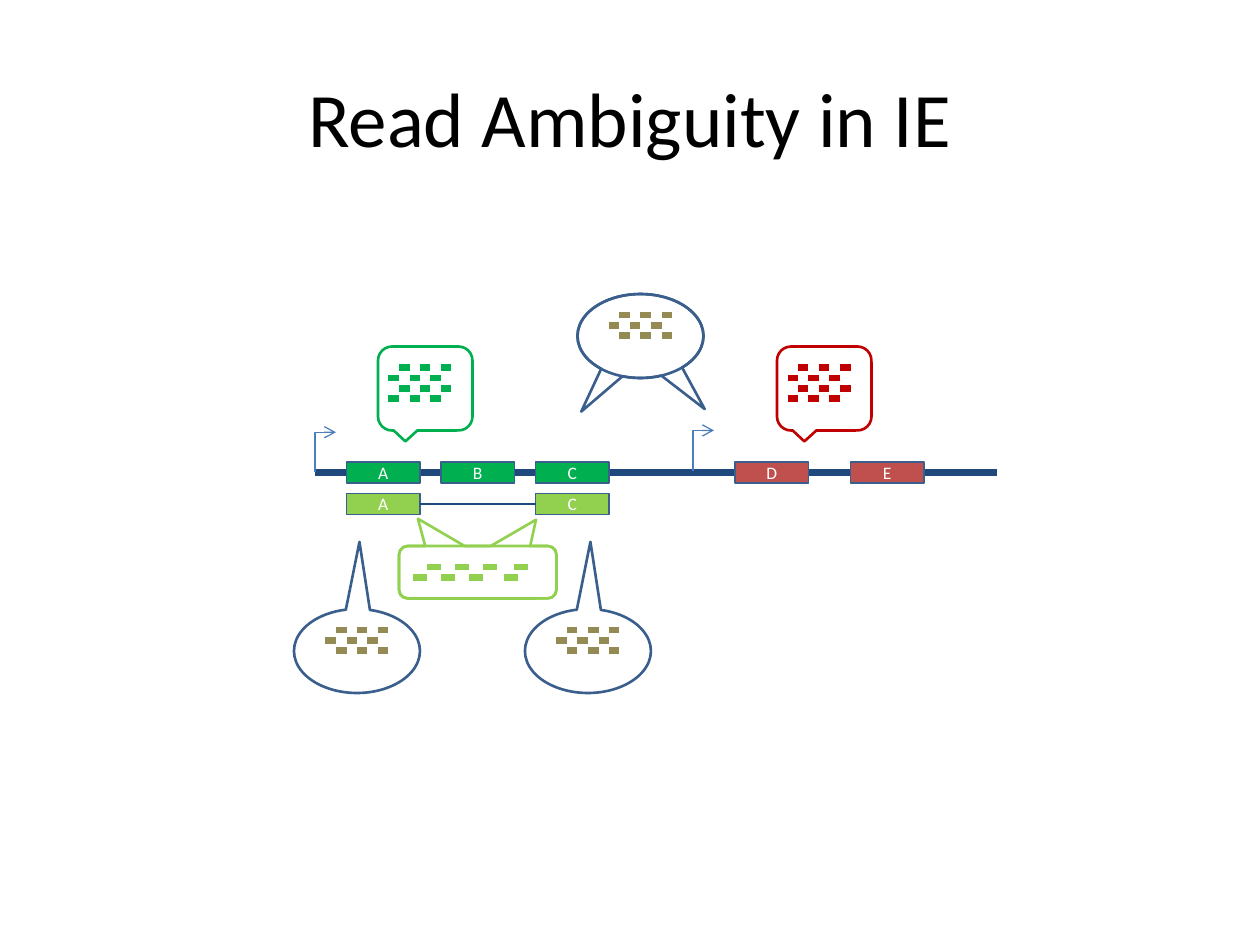
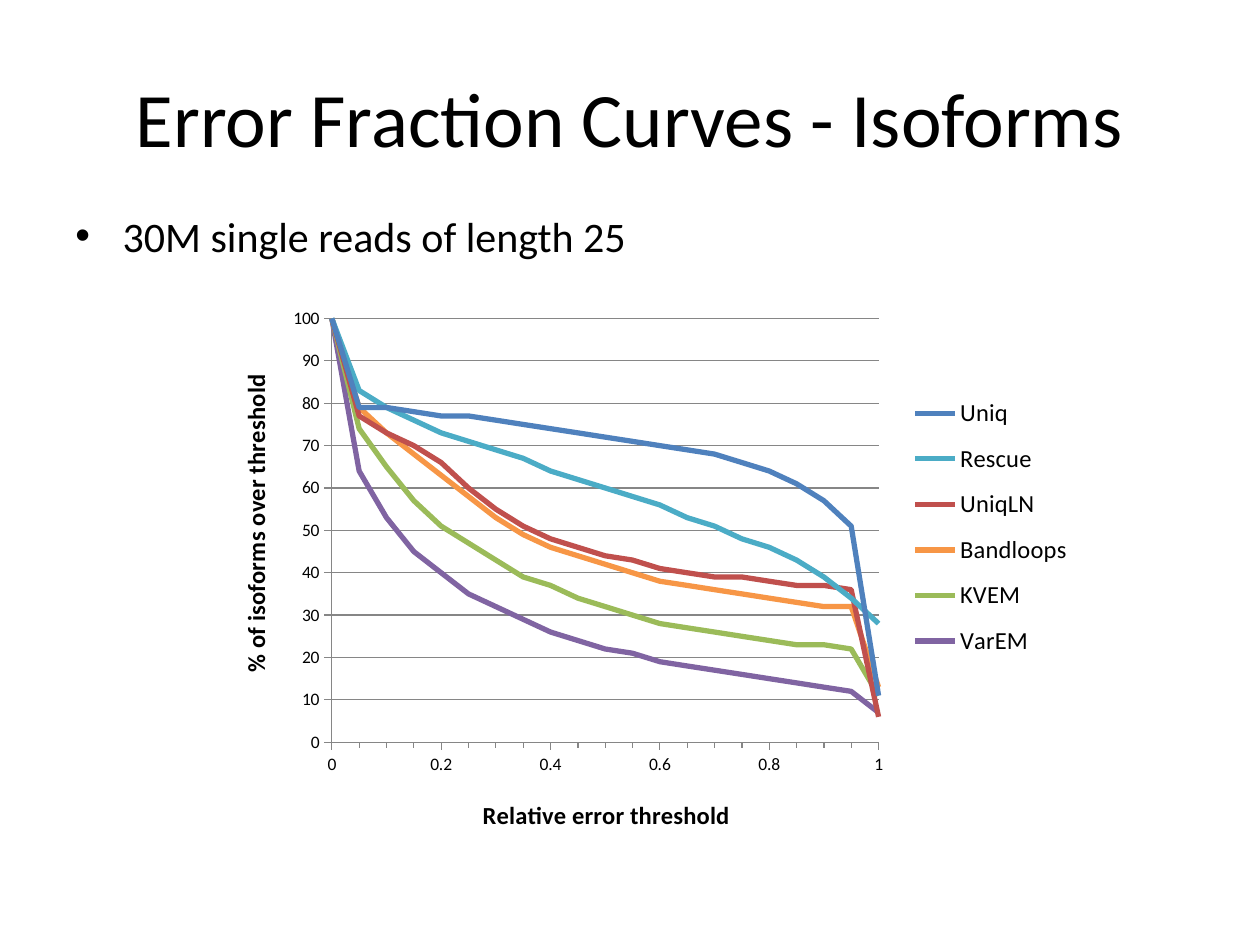
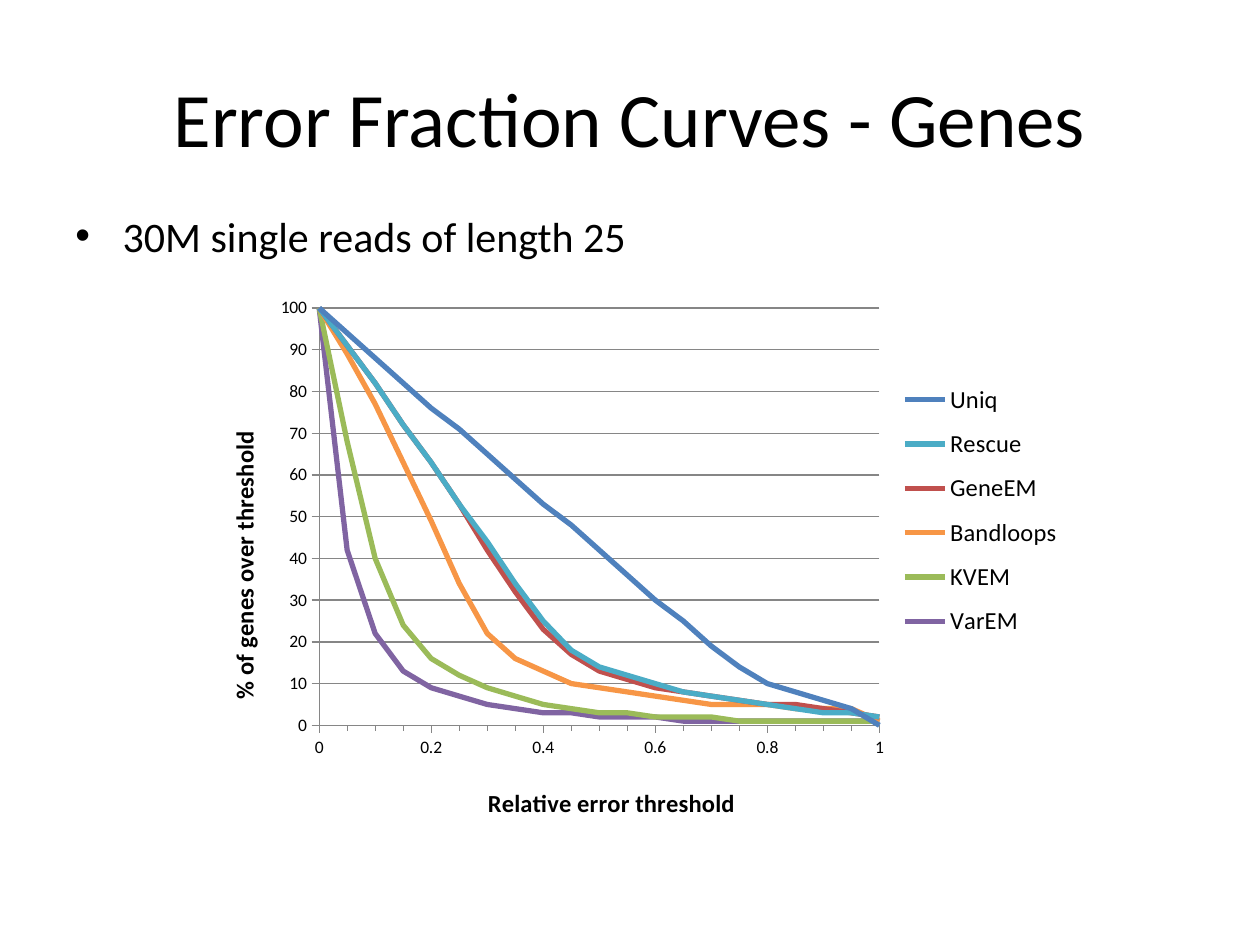
import dataclasses

import pptx
import pptx.chart.data
import pptx.dml.color
import pptx.enum.chart
import pptx.enum.shapes
import pptx.enum.text
import pptx.oxml
import pptx.oxml.ns
import pptx.oxml.xmlchemy
import pptx.util

Pt = pptx.util.Pt
SHAPE = pptx.enum.shapes.MSO_SHAPE
CONNECTOR = pptx.enum.shapes.MSO_CONNECTOR
TICK = pptx.enum.chart.XL_TICK_MARK
qn = pptx.oxml.ns.qn
OxmlElement = pptx.oxml.xmlchemy.OxmlElement


@dataclasses.dataclass(frozen=True)
class Theme:
    font: str = "Calibri"
    text: str = "000000"
    white: str = "FFFFFF"
    genome: str = "1F497D"
    outline: str = "3A5F8C"
    promoter: str = "4B7EBC"
    gene1: str = "00B050"
    isoform: str = "92D050"
    gene2: str = "C0504D"
    gene2_reads: str = "C00000"
    shared_reads: str = "948A54"
    grid: str = "868686"
    curves: tuple = ("4F81BD", "4BACC6", "C0504D", "F79646", "9BBB59", "8064A2")
    title_size: int = 44
    body_size: int = 24
    chart_title_size: int = 14
    small_size: int = 10


THEME = Theme()
EXON_W, EXON_H = 42, 12
READ_W, ROW_STEP = 6, 6

ISOFORM_CURVES = {
    "Uniq": (100, 79, 79, 78, 77, 77, 76, 75, 74, 73, 72, 71, 70, 69, 68, 66, 64, 61, 57, 51, 11),
    "Rescue": (100, 83, 79, 76, 73, 71, 69, 67, 64, 62, 60, 58, 56, 53, 51, 48, 46, 43, 39, 34, 28),
    "UniqLN": (100, 77, 73, 70, 66, 60, 55, 51, 48, 46, 44, 43, 41, 40, 39, 39, 38, 37, 37, 36, 6),
    "Bandloops": (100, 79, 73, 68, 63, 58, 53, 49, 46, 44, 42, 40, 38, 37, 36, 35, 34, 33, 32, 32, 13),
    "KVEM": (100, 74, 65, 57, 51, 47, 43, 39, 37, 34, 32, 30, 28, 27, 26, 25, 24, 23, 23, 22, 11),
    "VarEM": (100, 64, 53, 45, 40, 35, 32, 29, 26, 24, 22, 21, 19, 18, 17, 16, 15, 14, 13, 12, 7),
}
GENE_CURVES = {
    "Uniq": (100, 94, 88, 82, 76, 71, 65, 59, 53, 48, 42, 36, 30, 25, 19, 14, 10, 8, 6, 4, 0),
    "Rescue": (100, 91, 82, 72, 63, 53, 44, 34, 25, 18, 14, 12, 10, 8, 7, 6, 5, 4, 3, 3, 2),
    "GeneEM": (100, 91, 82, 72, 63, 53, 42, 32, 23, 17, 13, 11, 9, 8, 7, 6, 5, 5, 4, 3, 2),
    "Bandloops": (100, 89, 77, 63, 49, 34, 22, 16, 13, 10, 9, 8, 7, 6, 5, 5, 5, 4, 4, 4, 1),
    "KVEM": (100, 68, 40, 24, 16, 12, 9, 7, 5, 4, 3, 3, 2, 2, 2, 1, 1, 1, 1, 1, 1),
    "VarEM": (100, 42, 22, 13, 9, 7, 5, 4, 3, 3, 2, 2, 2, 1, 1, 1, 1, 1, 1, 1, 1),
}


def rgb(color):
    return pptx.dml.color.RGBColor.from_string(color)


def style_font(font, size, color=THEME.text, bold=False):
    font.name = THEME.font
    font.size = Pt(size)
    font.bold = bold
    font.color.rgb = rgb(color)


def add_run(p, text, size, color=THEME.text, bold=False):
    r = p.add_run()
    r.text = text
    style_font(r.font, size, color, bold)


def style_line(line, color, width):
    line.color.rgb = rgb(color)
    line.width = Pt(width)


def add_title_slide(prs, title):
    sl = prs.slides.add_slide(prs.slide_layouts[5])
    sp = sl.shapes.title
    sp.left, sp.top, sp.width, sp.height = Pt(36), Pt(21.6), Pt(648), Pt(90)
    tf = sp.text_frame
    tf.vertical_anchor = pptx.enum.text.MSO_ANCHOR.MIDDLE
    p = tf.paragraphs[0]
    p.alignment = pptx.enum.text.PP_ALIGN.CENTER
    add_run(p, title, THEME.title_size)
    return sl


def add_bullet(sl, text):
    tf = sl.shapes.add_textbox(Pt(36), Pt(116.6), Pt(648), Pt(40)).text_frame
    tf.word_wrap = True
    p = tf.paragraphs[0]
    p.space_before = Pt(4.8)
    ppr = p._p.get_or_add_pPr()
    ppr.set("marL", str(Pt(27)))
    ppr.set("indent", str(-Pt(27)))
    font = OxmlElement("a:buFont")
    font.set("typeface", "Arial")
    bullet = OxmlElement("a:buChar")
    bullet.set("char", "•")
    ppr.extend([font, bullet])
    add_run(p, text, THEME.body_size)


def add_line(shapes, x1, y1, x2, y2, color, width, kind=CONNECTOR.STRAIGHT):
    cn = shapes.add_connector(kind, Pt(x1), Pt(y1), Pt(x2), Pt(y2))
    style_line(cn.line, color, width)
    cn._element.spPr.append(OxmlElement("a:effectLst"))
    return cn


def add_promoter(shapes, x, y, rise=23, run=12):
    """Arrow that goes up from (x, y) and then right."""
    cx, cy = x + run / 2, y - rise / 2
    cn = add_line(shapes, cx + rise / 2, cy + run / 2, cx - rise / 2, cy - run / 2,
                  THEME.promoter, 0.75, CONNECTOR.ELBOW)
    sppr = cn._element.spPr
    sppr.find(qn("a:xfrm")).set("rot", "5400000")
    sppr.find(qn("a:prstGeom")).set("prst", "bentConnector2")
    tail = OxmlElement("a:tailEnd")
    tail.set("type", "arrow")
    sppr.find(qn("a:ln")).append(tail)


def add_exon(shapes, name, x, y, color):
    sp = shapes.add_shape(SHAPE.RECTANGLE, Pt(x), Pt(y), Pt(EXON_W), Pt(EXON_H))
    sp.shadow.inherit = False
    sp.fill.solid()
    sp.fill.fore_color.rgb = rgb(color)
    style_line(sp.line, THEME.outline, 0.75)
    tf = sp.text_frame
    tf.margin_left = tf.margin_right = tf.margin_top = tf.margin_bottom = 0
    tf.vertical_anchor = pptx.enum.text.MSO_ANCHOR.MIDDLE
    p = tf.paragraphs[0]
    p.alignment = pptx.enum.text.PP_ALIGN.CENTER
    add_run(p, name, THEME.small_size, THEME.white)
    return sp


def add_reads(shapes, x, y, rows, cols, color, width=READ_W, stagger=READ_W):
    """Rows of short reads; every other row, from the first, is shifted right."""
    for row in range(rows):
        start = x + (stagger if row % 2 == 0 else 0)
        for col in range(cols):
            left = start + 2 * width * col
            top = y + ROW_STEP * row
            add_line(shapes, left, top, left + width, top, color, 4)


def add_callout(shapes, kind, x, y, w, h, color, tip=None):
    sp = shapes.add_shape(kind, Pt(x), Pt(y), Pt(w), Pt(h))
    sp.shadow.inherit = False
    sp.fill.background()
    style_line(sp.line, color, 1.5)
    if tip:
        sp.adjustments[0], sp.adjustments[1] = tip


def add_gene_reads(sl, x, y, color):
    shapes = sl.shapes.add_group_shape().shapes
    add_reads(shapes, x + 6, y + 12, 4, 3, color)
    add_callout(shapes, SHAPE.ROUNDED_RECTANGULAR_CALLOUT, x, y, 54, 48, color,
                (-0.21, 0.63))


def add_shared_reads(sl, x, y, tips):
    shapes = sl.shapes.add_group_shape().shapes
    add_reads(shapes, x + 18, y + 12, 3, 3, THEME.shared_reads)
    for tip in tips:
        add_callout(shapes, SHAPE.OVAL_CALLOUT, x, y, 72, 48, THEME.outline, tip)


def add_junction_reads(sl, x, y):
    add_reads(sl.shapes, x + 8, y + 12, 2, 3, THEME.isoform, width=8, stagger=8)
    add_reads(sl.shapes, x + 60, y + 12, 2, 1, THEME.isoform, width=8)
    for tip in ((-0.38, -1.02), (0.37, -1)):
        add_callout(sl.shapes, SHAPE.ROUNDED_RECTANGULAR_CALLOUT, x, y, 90, 30,
                    THEME.isoform, tip)


def add_gene_model(sl):
    shapes = sl.shapes.add_group_shape().shapes
    add_line(shapes, 180, 270, 570, 270, THEME.genome, 4)
    for name, x, color in (("A", 198, THEME.gene1), ("B", 252, THEME.gene1),
                           ("C", 306, THEME.gene1), ("D", 420, THEME.gene2),
                           ("E", 486, THEME.gene2)):
        add_exon(shapes, name, x, 264, color)
    add_promoter(shapes, 180, 270)
    add_promoter(shapes, 396, 269)
    first = add_exon(shapes, "A", 198, 282, THEME.isoform)
    last = add_exon(shapes, "C", 306, 282, THEME.isoform)
    intron = add_line(shapes, 198 + EXON_W, 288, 306, 288, THEME.genome, 1)
    intron.begin_connect(first, 3)
    intron.end_connect(last, 1)


def set_layout(el, x, y, w=None, h=None, inner=False):
    """Place a chart part by fractions of the chart area."""
    layout = el.find(qn("c:layout"))
    if layout is None:
        layout = OxmlElement("c:layout")
        overlay = el.find(qn("c:overlay"))
        if overlay is None:
            el.insert(0, layout)
        else:
            overlay.addprevious(layout)
    for child in list(layout):
        layout.remove(child)
    manual = OxmlElement("c:manualLayout")
    layout.append(manual)
    settings = [("layoutTarget", "inner" if inner else None), ("xMode", "edge"),
                ("yMode", "edge"), ("x", x), ("y", y), ("w", w), ("h", h)]
    for tag, value in settings:
        if value is not None:
            child = OxmlElement("c:" + tag)
            child.set("val", str(value))
            manual.append(child)


def style_axis(axis, title, title_at, top, step):
    axis.minimum_scale, axis.maximum_scale, axis.major_unit = 0, top, step
    axis.major_tick_mark = TICK.OUTSIDE
    axis.minor_tick_mark = TICK.NONE
    axis.has_major_gridlines = False
    axis.tick_labels.number_format = "General"
    axis.tick_labels.number_format_is_linked = False
    style_font(axis.tick_labels.font, THEME.small_size)
    style_line(axis.format.line, THEME.grid, 0.75)
    tf = axis.axis_title.text_frame
    add_run(tf.paragraphs[0], title, THEME.chart_title_size, bold=True)
    set_layout(axis.axis_title._element, *title_at)
    return tf


def add_error_chart(sl, box, curves, y_title, plot, x_title_at, y_title_at, legend_x):
    data = pptx.chart.data.XyChartData()
    for name, values in curves.items():
        series = data.add_series(name)
        for i, value in enumerate(values):
            series.add_data_point(i / 20, value)
    chart = sl.shapes.add_chart(
        pptx.enum.chart.XL_CHART_TYPE.XY_SCATTER_LINES_NO_MARKERS,
        *(Pt(v) for v in box), data).chart
    chart.has_title = False
    style_font(chart.font, THEME.small_size)
    chart.plots[0].vary_by_categories = False
    for series, color in zip(chart.plots[0].series, THEME.curves):
        series.smooth = False
        series.marker.style = pptx.enum.chart.XL_MARKER_STYLE.NONE
        style_line(series.format.line, color, 3)

    x_axis, y_axis = chart.category_axis, chart.value_axis
    style_axis(x_axis, "Relative error threshold", x_title_at, 1, 0.2)
    x_axis.minor_unit = 0.05
    x_axis.minor_tick_mark = TICK.OUTSIDE
    tf = style_axis(y_axis, y_title, y_title_at, 100, 10)
    tf._txBody.bodyPr.set("rot", "-5400000")
    tf._txBody.bodyPr.set("vert", "horz")
    y_axis.has_major_gridlines = True
    style_line(y_axis.major_gridlines.format.line, THEME.grid, 0.75)

    chart.has_legend = True
    legend = chart.legend
    legend.position = pptx.enum.chart.XL_LEGEND_POSITION.RIGHT
    legend.include_in_layout = False
    style_font(legend.font, THEME.chart_title_size)
    set_layout(legend._element, legend_x, 0.19, 0.17, 0.45)
    set_layout(chart._chartSpace.chart.plotArea, *plot, inner=True)


def build_ambiguity_slide(prs):
    sl = add_title_slide(prs, "Read Ambiguity in IE")
    add_gene_reads(sl, 216, 198, THEME.gene1)
    add_gene_reads(sl, 444, 198, THEME.gene2_reads)
    add_gene_model(sl)
    add_junction_reads(sl, 228, 312)
    for x in (168, 300):
        add_shared_reads(sl, x, 348, [(0.02, -1.3)])
    add_shared_reads(sl, 330, 168, [(-0.47, 0.9), (0.51, 0.87)])


def build_curve_slide(prs, title, **chart):
    sl = add_title_slide(prs, title)
    add_bullet(sl, "30M single reads of length 25")
    add_error_chart(sl, **chart)


def main():
    prs = pptx.Presentation()
    prs.slide_width, prs.slide_height = Pt(720), Pt(540)
    build_ambiguity_slide(prs)
    build_curve_slide(
        prs, "Error Fraction Curves - Isoforms", box=(78, 149, 558, 367),
        curves=ISOFORM_CURVES, y_title="% of isoforms over threshold",
        plot=(0.2, 0.09, 0.56, 0.66), x_title_at=(0.35, 0.83),
        y_title_at=(0.1, 0.17), legend_x=0.79)
    build_curve_slide(
        prs, "Error Fraction Curves - Genes", box=(72, 144, 552, 356),
        curves=GENE_CURVES, y_title="% of genes over threshold",
        plot=(0.2, 0.09, 0.58, 0.67), x_title_at=(0.37, 0.85),
        y_title_at=(0.1, 0.28), legend_x=0.8)
    prs.save("out.pptx")


if __name__ == "__main__":
    main()
